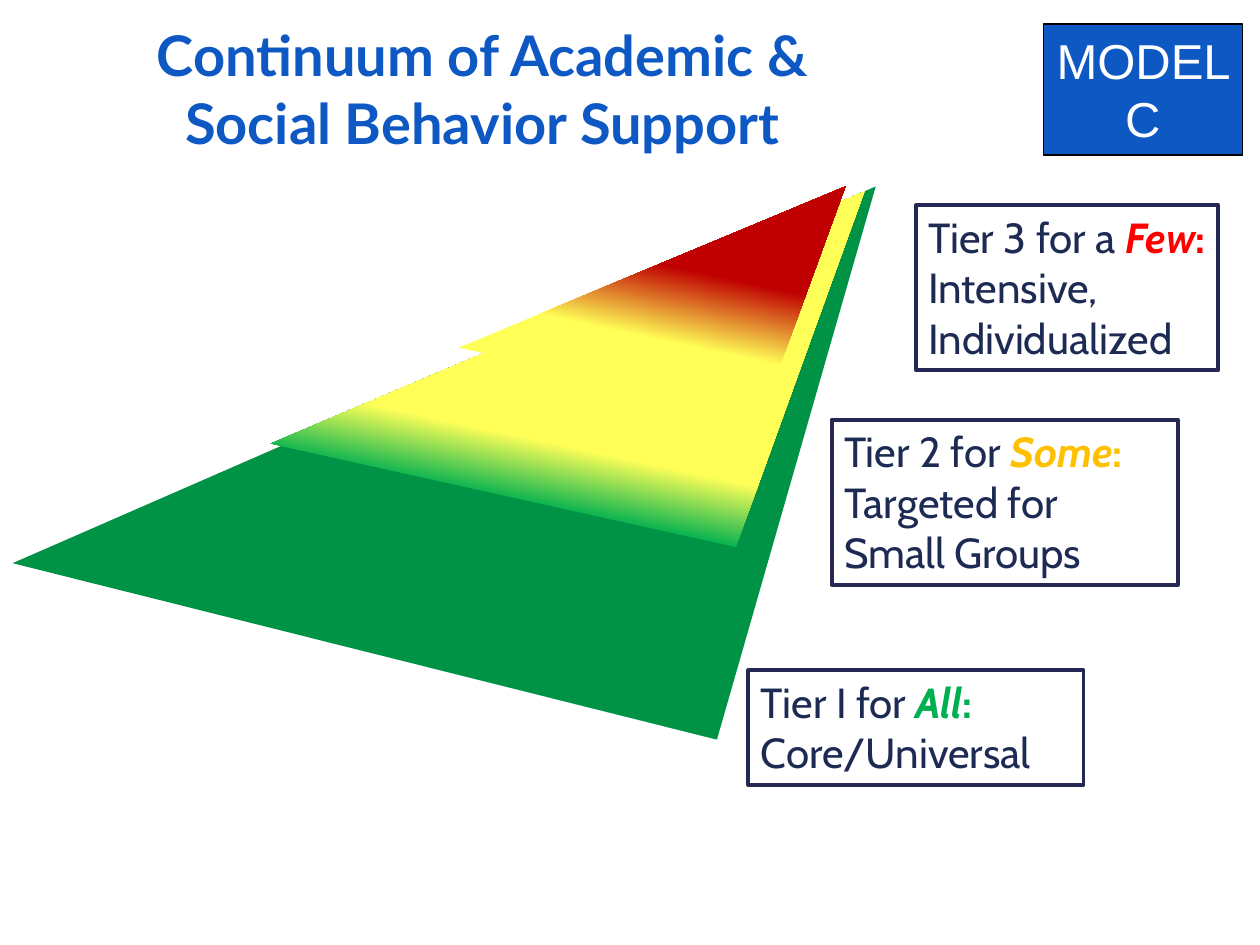
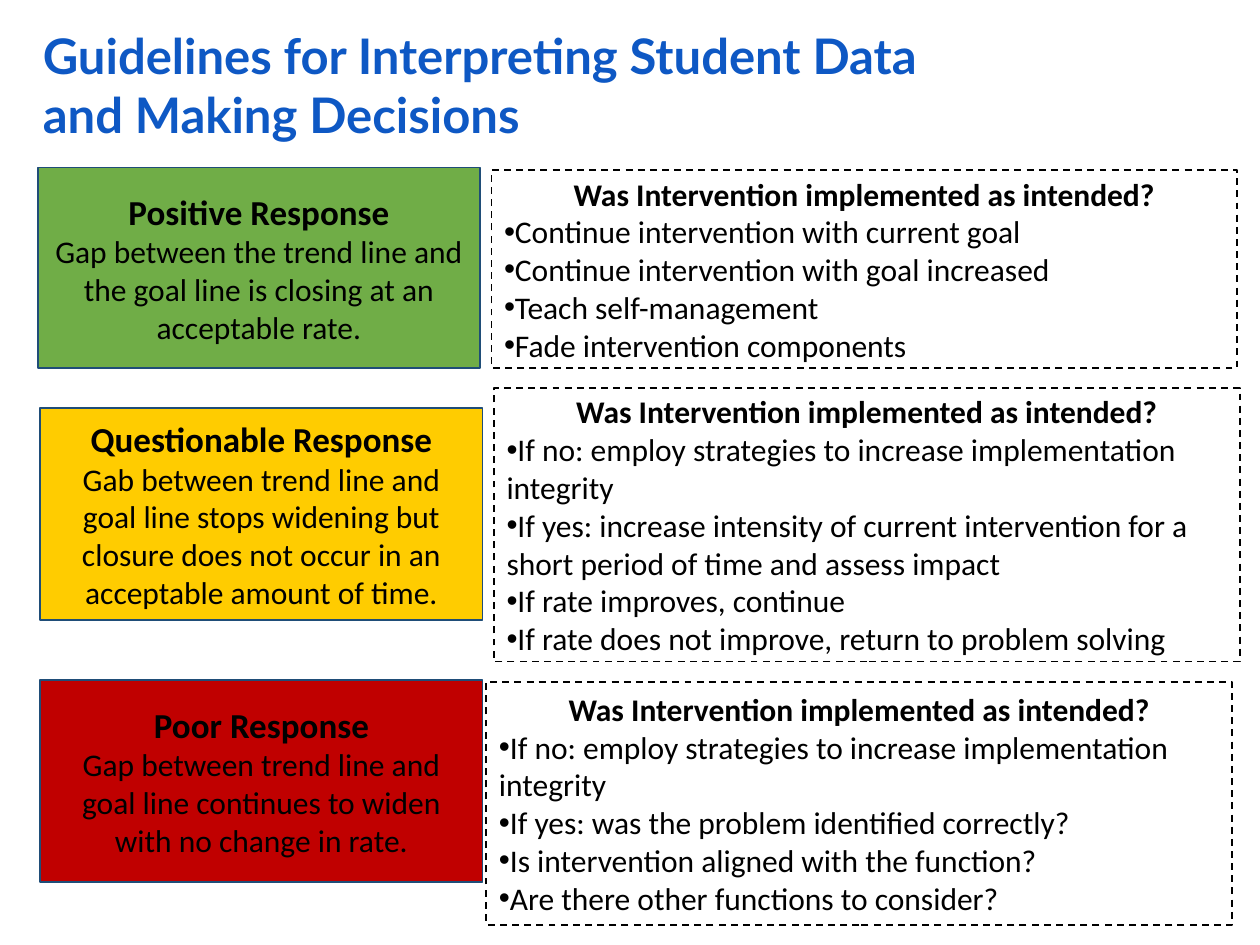
from lxml.etree import SubElement
from pptx import Presentation
from pptx.dml.color import RGBColor
from pptx.enum.dml import MSO_LINE
from pptx.enum.shapes import MSO_SHAPE
from pptx.enum.text import MSO_ANCHOR, MSO_AUTO_SIZE, PP_ALIGN
from pptx.oxml.ns import qn
from pptx.util import Pt

SCALE = 9144  # EMU in one px, 100 px to the inch
HEX = {
    "blue": "0E58C4", "navy": "242852", "ink": "1D2A53", "steel": "1F4D78",
    "black": "000000", "white": "FFFFFF", "pine": "009245", "green": "00B050",
    "lemon": "FFFF57", "wine": "C00000", "red": "FF0000", "amber": "FFC000",
    "leaf": "70AD47", "gold": "FFCC00",
}
ASK = "Was Intervention implemented as intended?"
STRATEGY = "If no: employ strategies to increase implementation integrity"

TIERS = [
    ((727, 163, 240, 131), "Tier 3 for a ", "Few", "red", "Intensive, Individualized"),
    ((660, 333, 275, 131), "Tier 2 for ", "Some", "amber", "Targeted for Small Groups"),
    ((594, 532, 266, 91), "Tier I for ", "All", "green", "Core/Universal"),
]
LAYERS = [
    ([(10, 447), (569, 587), (695, 148)], [("pine", 0)]),
    ([(215, 352), (584, 434), (686, 152)], [("green", 0.2), ("lemon", 0.34)]),
    ([(364, 276), (606, 326), (671, 148)], [("lemon", 0.37), ("wine", 0.62)]),
]
CARDS = [
    ((30, 133, 351, 159), "leaf", "Positive Response",
     "Gap between the trend line and the goal line is closing at an acceptable rate."),
    ((32, 324, 351, 168), "gold", "Questionable Response",
     "Gab between trend line and goal line stops widening but closure does not "
     "occur in an acceptable amount of time."),
    ((32, 540, 351, 160), "wine", "Poor Response",
     "Gap between trend line and goal line continues to widen with no change in rate."),
]
STEPS = [
    ((390, 135, 592, 157), [
        "Continue intervention with current goal",
        "Continue intervention with goal increased",
        "Teach self-management",
        "Fade intervention components"]),
    ((392, 308, 592, 217), [
        STRATEGY,
        "If yes: increase intensity of current intervention for a short period of "
        "time and assess impact",
        "If rate improves, continue",
        "If rate does not improve, return to problem solving"]),
    ((386, 541, 592, 193), [
        STRATEGY,
        "If yes: was the problem identified correctly?",
        "Is intervention aligned with the function?",
        "Are there other functions to consider?"]),
]


def color(name):
    return RGBColor.from_string(HEX[name])


def px(*nums):
    return [n * SCALE for n in nums]


class Deck:
    def __init__(self):
        self.prs = Presentation()
        self.prs.slide_width, self.prs.slide_height = px(1000, 750)
        self.slide = None

    def start(self, layout):
        self.slide = self.prs.slides.add_slide(self.prs.slide_layouts[layout])

    def place(self, shape, at):
        shape.left, shape.top, shape.width, shape.height = px(*at)

    def frame(self, shape, anchor):
        frame = shape.text_frame
        frame.word_wrap = True
        frame.auto_size = MSO_AUTO_SIZE.NONE
        frame.vertical_anchor = anchor
        return frame

    def font(self, run, face, size, tint, bold=False, slant=False):
        font = run.font
        font.name, font.size = face, Pt(size)
        font.bold, font.italic = bold, slant
        font.color.rgb = color(tint)

    def para(self, para, text, style, align=PP_ALIGN.LEFT):
        para.text = text
        para.alignment = align
        para.space_before = Pt(0)
        for run in para.runs:
            self.font(run, *style)

    def bullet(self, para, mark=True):
        """Set a flush bullet, or take the inherited one away."""
        props = para._p.get_or_add_pPr()
        props.set("marL", "0")
        props.set("indent", "0")
        if mark:
            SubElement(props, qn("a:buFont")).set("typeface", "Arial")
            SubElement(props, qn("a:buChar")).set("char", "•")
        else:
            SubElement(props, qn("a:buNone"))

    def title(self, at, lines, size, align):
        shape = self.slide.shapes.title
        self.place(shape, at)
        frame = self.frame(shape, MSO_ANCHOR.MIDDLE)
        frame.text = "\n".join(lines)
        for para, line in zip(frame.paragraphs, lines):
            self.para(para, line, ("Lato", size, "blue", True), align)

    def box(self, at, fill, line, width, anchor):
        shape = self.slide.shapes.add_shape(MSO_SHAPE.RECTANGLE, *px(*at))
        shape.shadow.inherit = False
        if fill:
            shape.fill.solid()
            shape.fill.fore_color.rgb = color(fill)
        else:
            shape.fill.background()
        shape.line.color.rgb = color(line)
        shape.line.width = Pt(width)
        return self.frame(shape, anchor)

    def layer(self, points, stops):
        build = self.slide.shapes.build_freeform(*points[0], scale=SCALE)
        build.add_line_segments(points[1:], close=True)
        shape = build.convert_to_shape()
        shape.shadow.inherit = False
        shape.line.fill.background()
        if len(stops) == 1:
            shape.fill.solid()
            shape.fill.fore_color.rgb = color(stops[0][0])
            return
        shape.fill.gradient()
        shape.fill.gradient_angle = 78
        for stop, (tint, spot) in zip(shape.fill.gradient_stops, stops):
            stop.color.rgb = color(tint)
            stop.position = spot

    def tier(self, at, lead, word, tint, rest):
        para = self.box(at, None, "navy", 2.25, MSO_ANCHOR.TOP).paragraphs[0]
        para.alignment = PP_ALIGN.LEFT
        parts = [(lead, "ink", False, False), (word, tint, True, True),
                 (": ", tint, True, False), (rest, "ink", False, False)]
        for text, *look in parts:
            run = para.add_run()
            run.text = text
            self.font(run, "Cabin", 24, *look)

    def badge(self, at, text):
        frame = self.box(at, "blue", "black", 0.75, MSO_ANCHOR.TOP)
        self.para(frame.paragraphs[0], text, ("Arial", 28, "white"), PP_ALIGN.CENTER)

    def card(self, at, fill, head, text):
        frame = self.box(at, fill, "steel", 1, MSO_ANCHOR.MIDDLE)
        self.para(frame.paragraphs[0], head, ("Calibri", 20, "black", True), PP_ALIGN.CENTER)
        self.para(frame.add_paragraph(), text, ("Calibri", 18, "black"), PP_ALIGN.CENTER)

    def steps(self, shape, at, items):
        self.place(shape, at)
        shape.fill.solid()
        shape.fill.fore_color.rgb = color("white")
        shape.line.color.rgb = color("black")
        shape.line.width = Pt(1)
        shape.line.dash_style = MSO_LINE.DASH
        frame = self.frame(shape, MSO_ANCHOR.MIDDLE)
        head = frame.paragraphs[0]
        self.para(head, ASK, ("Calibri", 18, "black", True), PP_ALIGN.CENTER)
        self.bullet(head, False)
        for item in items:
            para = frame.add_paragraph()
            self.para(para, item, ("Calibri", 18, "black"))
            self.bullet(para)


def main():
    deck = Deck()

    deck.start(5)
    deck.title((95, 21, 576, 98), ["Continuum of Academic & Social Behavior Support"],
               32, PP_ALIGN.CENTER)
    for layer in LAYERS:
        deck.layer(*layer)
    for tier in TIERS:
        deck.tier(*tier)
    deck.badge((828, 19, 158, 104), "MODEL C")

    deck.start(4)
    deck.title((24, 15, 926, 104),
               ["Guidelines for Interpreting Student Data", "and Making Decisions"],
               28, PP_ALIGN.LEFT)
    for card in CARDS:
        deck.card(*card)
    *bodies, spare = list(deck.slide.placeholders)[1:]
    for body, step in zip(bodies, STEPS):
        deck.steps(body, *step)
    spare.element.getparent().remove(spare.element)

    deck.prs.save("out.pptx")


if __name__ == "__main__":
    main()
